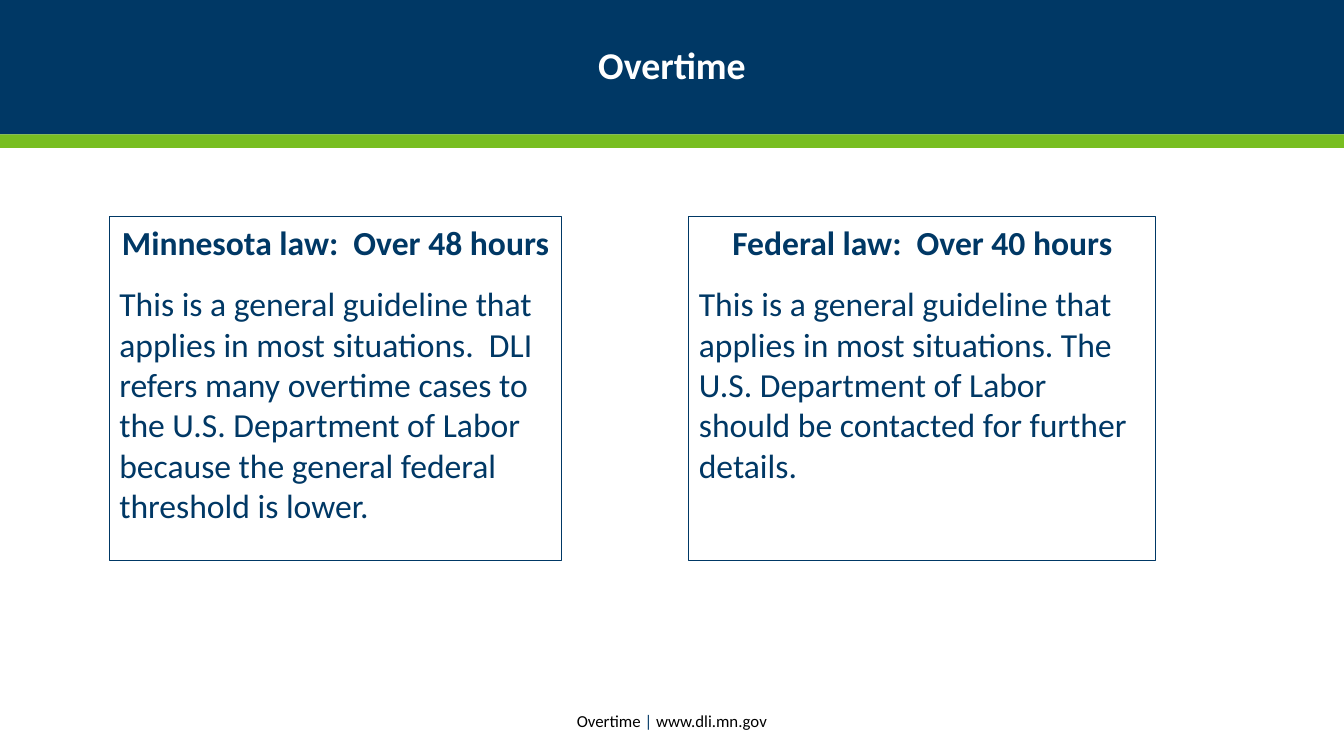
from dataclasses import dataclass

import pptx
import pptx.dml.color
import pptx.enum.shapes
import pptx.enum.text
import pptx.oxml
import pptx.oxml.ns
import pptx.shapes.base
import pptx.slide
import pptx.text.text
import pptx.util

COLORS = {"navy": "003865", "green": "78BE21", "white": "FFFFFF", "black": "000000"}
FONT = "Calibri"
SLIDE_WIDTH = pptx.util.Inches(13.33)
SLIDE_HEIGHT = pptx.util.Inches(7.5)
COLUMNS = 160
ROWS = 90
CENTER = pptx.enum.text.PP_ALIGN.CENTER
MIDDLE = pptx.enum.text.MSO_ANCHOR.MIDDLE


@dataclass(frozen=True)
class Area:
    column: float
    row: float
    columns: float
    rows: float

    def bounds(self) -> tuple[int, int, int, int]:
        return (
            round(SLIDE_WIDTH * self.column / COLUMNS),
            round(SLIDE_HEIGHT * self.row / ROWS),
            round(SLIDE_WIDTH * self.columns / COLUMNS),
            round(SLIDE_HEIGHT * self.rows / ROWS),
        )


@dataclass(frozen=True)
class LawPanel:
    placeholder: int
    area: Area
    heading: str
    body: str


TITLE_AREA = Area(0, 0, COLUMNS, 16)
STRIPE_AREA = Area(0, 16, COLUMNS, 1.6)
FOOTER_AREA = Area(43.3, 83.4, 73.4, 4.8)
LAW_PANELS = [
    LawPanel(
        1,
        Area(13, 25.8, 53.9, 40.9),
        "Minnesota law:  Over 48 hours",
        "This is a general guideline that applies in most situations.  DLI refers many "
        "overtime cases to the U.S. Department of Labor because the general federal "
        "threshold is lower.",
    ),
    LawPanel(
        2,
        Area(82, 25.8, 55.6, 40.9),
        "Federal law:  Over 40 hours",
        "This is a general guideline that applies in most situations. The U.S. Department "
        "of Labor should be contacted for further details.",
    ),
]
FOOTER_RUNS = [("Overtime", "black"), (" |", "navy"), (" www.dli.mn.gov", "black")]


def rgb(name: str) -> pptx.dml.color.RGBColor:
    return pptx.dml.color.RGBColor.from_string(COLORS[name])


def place(shape: pptx.shapes.base.BaseShape, area: Area) -> None:
    shape.left, shape.top, shape.width, shape.height = area.bounds()


def format_font(font: pptx.text.text.Font, size: float, color: str, bold: bool = False) -> None:
    font.name = FONT
    font.size = pptx.util.Pt(size)
    font.bold = bold
    font.color.rgb = rgb(color)


def remove_bullet(paragraph: pptx.text.text._Paragraph) -> None:
    properties = paragraph._p.get_or_add_pPr()
    properties.set("marL", "0")
    properties.set("indent", "0")
    properties.append(pptx.oxml.parse_xml(f"<a:buNone {pptx.oxml.ns.nsdecls('a')}/>"))


def draw_title(slide: pptx.slide.Slide) -> None:
    title = slide.shapes.title
    place(title, TITLE_AREA)
    title.fill.solid()
    title.fill.fore_color.rgb = rgb("navy")
    frame = title.text_frame
    frame.text = "Overtime"
    frame.auto_size = pptx.enum.text.MSO_AUTO_SIZE.NONE
    frame.vertical_anchor = MIDDLE
    frame.margin_left = frame.margin_right = pptx.util.Inches(0.9)
    paragraph = frame.paragraphs[0]
    paragraph.alignment = CENTER
    paragraph.line_spacing = 0.9
    format_font(paragraph.runs[0].font, 27, "white", True)


def draw_stripe(slide: pptx.slide.Slide) -> None:
    stripe = slide.shapes.add_shape(
        pptx.enum.shapes.MSO_SHAPE.RECTANGLE, *STRIPE_AREA.bounds()
    )
    stripe.shadow.inherit = False
    stripe.fill.solid()
    stripe.fill.fore_color.rgb = rgb("green")
    stripe.line.fill.background()


def draw_law_panel(slide: pptx.slide.Slide, panel: LawPanel) -> None:
    box = slide.placeholders[panel.placeholder]
    place(box, panel.area)
    box.line.color.rgb = rgb("navy")
    box.line.width = pptx.util.Pt(0.75)
    frame = box.text_frame
    frame.text = f"{panel.heading}\n{panel.body}"
    frame.auto_size = pptx.enum.text.MSO_AUTO_SIZE.NONE
    for index, paragraph in enumerate(frame.paragraphs):
        is_heading = index == 0
        remove_bullet(paragraph)
        paragraph.alignment = CENTER if is_heading else pptx.enum.text.PP_ALIGN.LEFT
        paragraph.space_before = pptx.util.Pt(0 if is_heading else 7.5)
        paragraph.space_after = pptx.util.Pt(7.5)
        format_font(paragraph.runs[0].font, 24, "navy", is_heading)


def draw_footer(slide: pptx.slide.Slide) -> None:
    footer = slide.shapes.add_textbox(*FOOTER_AREA.bounds())
    frame = footer.text_frame
    frame.word_wrap = True
    frame.vertical_anchor = MIDDLE
    paragraph = frame.paragraphs[0]
    paragraph.alignment = CENTER
    for text, color in FOOTER_RUNS:
        run = paragraph.add_run()
        run.text = text
        format_font(run.font, 12, color)


def main() -> None:
    presentation = pptx.Presentation()
    presentation.slide_width = SLIDE_WIDTH
    presentation.slide_height = SLIDE_HEIGHT
    slide = presentation.slides.add_slide(presentation.slide_layouts.get_by_name("Two Content"))
    draw_stripe(slide)
    draw_title(slide)
    for panel in LAW_PANELS:
        draw_law_panel(slide, panel)
    draw_footer(slide)
    presentation.save("out.pptx")


if __name__ == "__main__":
    main()
